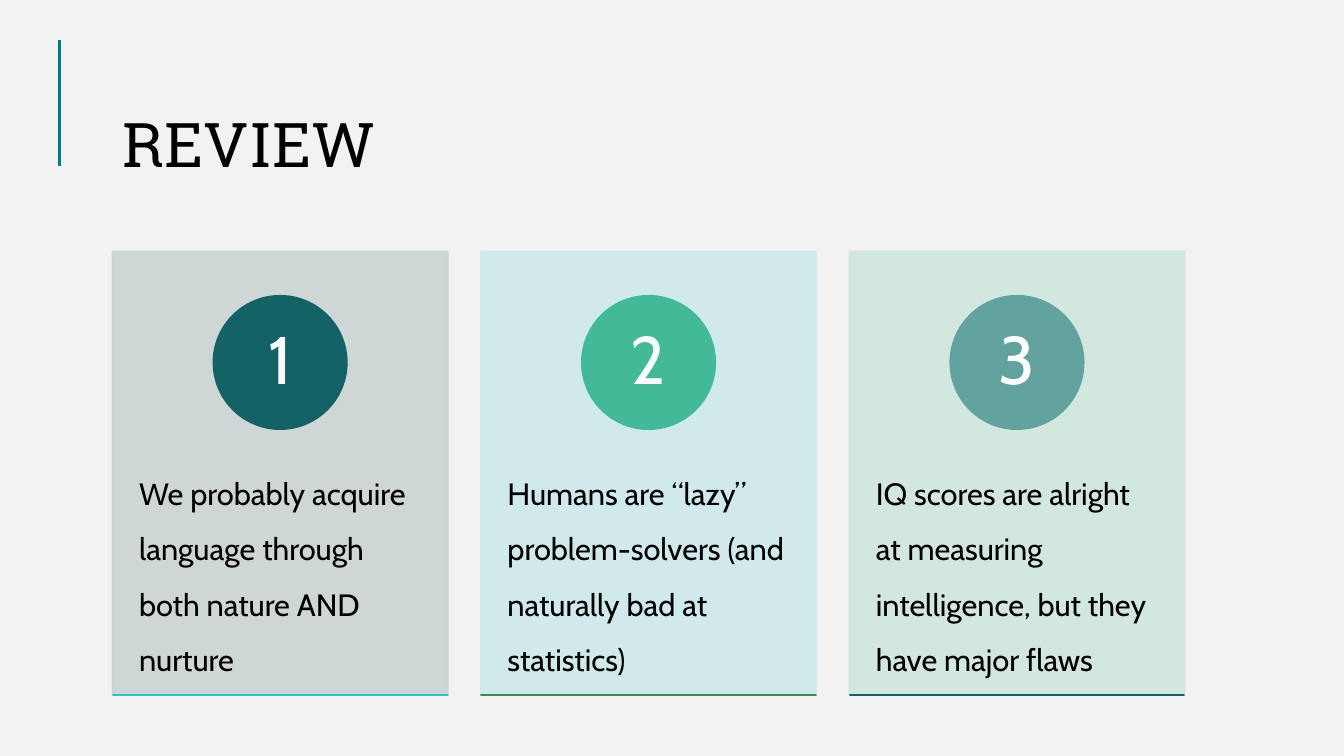
from dataclasses import dataclass

from lxml import etree
from pptx import Presentation
from pptx.dml.color import RGBColor
from pptx.enum.shapes import MSO_CONNECTOR, MSO_SHAPE
from pptx.enum.text import MSO_ANCHOR, PP_ALIGN
from pptx.oxml.ns import qn
from pptx.util import Pt

RECTANGLE, OVAL = MSO_SHAPE.RECTANGLE, MSO_SHAPE.OVAL
STRAIGHT = MSO_CONNECTOR.STRAIGHT
TOP, MIDDLE = MSO_ANCHOR.TOP, MSO_ANCHOR.MIDDLE
LEFT, CENTER = PP_ALIGN.LEFT, PP_ALIGN.CENTER
TITLE_ONLY = 5


@dataclass(frozen=True)
class Theme:
    background: str = "F2F2F2"
    accent: str = "007E82"
    ink: str = "000000"
    white: str = "FFFFFF"
    heading_font: str = "Roboto Slab"
    body_font: str = "Cabin"
    title_size: int = 44
    number_size: int = 48
    body_size: int = 22
    line_width: float = 1.5


THEME = Theme()

# Statement, card colour, circle colour, base line colour
POINTS = [
    ("We probably acquire language through both nature AND nurture",
     "CCD3D3", "136266", "28C4CC"),
    ("Humans are “lazy” problem-solvers (and naturally bad at statistics)",
     "CDEAEC", "42BA97", "3E8853"),
    ("IQ scores are alright at measuring intelligence, but they have major flaws",
     "CFE7DD", "62A39F", "136266"),
]


def rgb(value):
    return RGBColor.from_string(value)


def write(shape, text, font, size, color, align, anchor, spacing, insets):
    frame = shape.text_frame
    frame.word_wrap = True
    frame.vertical_anchor = anchor
    frame.margin_left = frame.margin_right = Pt(insets[0])
    frame.margin_top = frame.margin_bottom = Pt(insets[1])
    frame.text = text
    paragraph = frame.paragraphs[0]
    paragraph.alignment = align
    paragraph.line_spacing = spacing
    paragraph.font.name = font
    paragraph.font.size = Pt(size)
    paragraph.font.color.rgb = rgb(color)


def add_block(slide, preset, left, top, width, height, color, opacity=100):
    block = slide.shapes.add_shape(preset, Pt(left), Pt(top), Pt(width), Pt(height))
    block.shadow.inherit = False
    block.fill.solid()
    block.line.width = Pt(THEME.line_width)
    for paint in (block.fill.fore_color, block.line.color):
        paint.rgb = rgb(color)
    if opacity < 100:
        for swatch in block._element.spPr.iter(qn("a:srgbClr")):
            etree.SubElement(swatch, qn("a:alpha"), val=str(opacity * 1000))
    return block


def add_heading(slide, left, top, width, height):
    # Accent rule beside the title
    rule = slide.shapes.add_connector(STRAIGHT, Pt(left - 38), Pt(top - 17.5),
                                      Pt(left - 38), Pt(top + 72.5))
    rule.line.color.rgb = rgb(THEME.accent)
    rule.line.width = Pt(THEME.line_width)
    etree.SubElement(rule._element.spPr, qn("a:effectLst"))

    title = slide.shapes.title
    title.left, title.top = Pt(left), Pt(top)
    title.width, title.height = Pt(width), Pt(height)
    write(title, "REVIEW", THEME.heading_font, THEME.title_size, THEME.ink,
          LEFT, MIDDLE, 0.9, (7.2, 3.6))


def add_card(slide, left, top, width, height, number, point):
    statement, card_color, circle_color, base_color = point
    add_block(slide, RECTANGLE, left, top, width, height, card_color, 90)

    # Statement
    body = slide.shapes.add_textbox(Pt(left), Pt(top + 120), Pt(width), Pt(190))
    write(body, statement, THEME.body_font, THEME.body_size, THEME.ink,
          LEFT, TOP, 1.5, (18.8, 26))

    # Numbered circle
    diameter = 95
    circle = add_block(slide, OVAL, left + (width - diameter) / 2, top + 31.7,
                       diameter, diameter, circle_color)
    write(circle, str(number), THEME.body_font, THEME.number_size, THEME.white,
          CENTER, MIDDLE, 0.9, (7.2, 0.7))

    # Base line
    add_block(slide, RECTANGLE, left, top + height, width, 0, base_color)


def add_cards(slide, left, top, width, height):
    gap = 24
    card_width = (width - gap * (len(POINTS) - 1)) / len(POINTS)
    for index, point in enumerate(POINTS):
        add_card(slide, left + index * (card_width + gap), top,
                 card_width, height, index + 1, point)


def main():
    deck = Presentation()
    deck.slide_width, deck.slide_height = Pt(960), Pt(540)
    slide = deck.slides.add_slide(deck.slide_layouts[TITLE_ONLY])
    slide.background.fill.solid()
    slide.background.fill.fore_color.rgb = rgb(THEME.background)
    add_heading(slide, 80.5, 46.3, 765.5, 118)
    add_cards(slide, 80.5, 179.7, 765.5, 316.5)
    deck.save("out.pptx")


if __name__ == "__main__":
    main()
